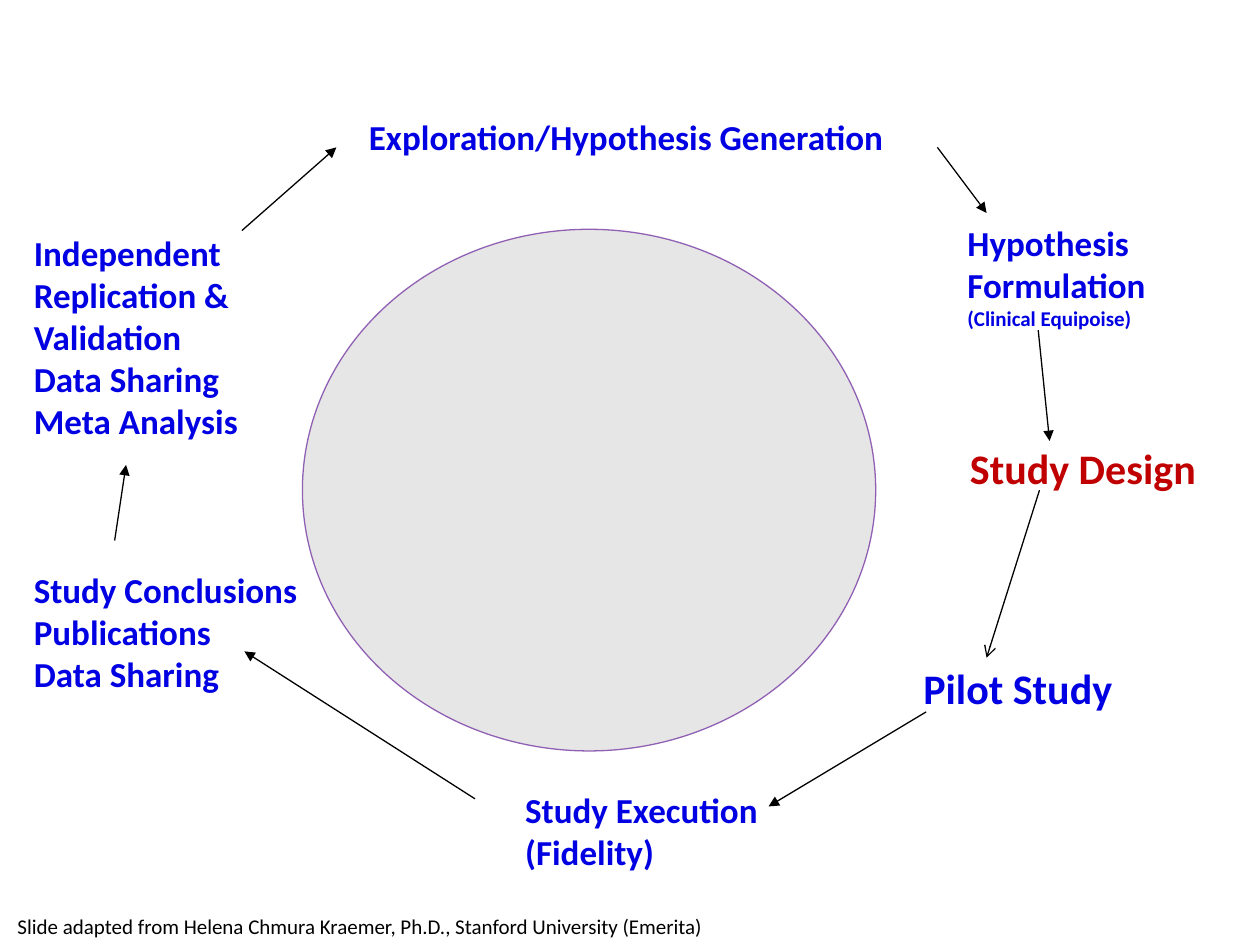
from lxml import etree
from pptx import Presentation
from pptx import util as u
from pptx.dml.color import RGBColor
from pptx.enum import shapes, text
from pptx.oxml import ns

PX = 9144  # EMU per px, 100 px to the inch
BLUE, RED, BLACK = "0000E2", "C00000", "000000"

# Stages of the cycle: box, lines of (text, size), colour, wrap
STAGES = [
    ((283, 87, 440, 44), [("Exploration/Hypothesis Generation", 20)], BLUE, True),
    ((758, 171, 225, 98), [("Hypothesis", 20), ("Formulation", 20),
                           ("(Clinical Equipoise)", 12)], BLUE, True),
    ((760, 346, 223, 50), [("Study Design", 24)], RED, True),
    ((723, 521, 179, 50), [("Pilot Study", 24)], BLUE, False),
    ((407, 621, 207, 77), [("Study Execution", 20), ("(Fidelity)", 20)], BLUE, False),
    ((17, 446, 250, 111), [("Study Conclusions", 20), ("Publications", 20),
                           ("Data Sharing", 20)], BLUE, True),
    ((17, 179, 229, 178), [("Independent", 20), ("Replication &", 20),
                           ("Validation", 20), ("Data Sharing", 20),
                           ("Meta Analysis", 20)], BLUE, True),
]

# Arrows from stage to stage: start, end, head
ARROWS = [
    ((744, 117), (783, 169), "triangle"),
    ((824, 262), (833, 350), "triangle"),
    ((825, 389), (783, 522), "arrow"),
    ((735, 565), (610, 640), "triangle"),
    ((377, 634), (194, 517), "triangle"),
    ((91, 429), (100, 369), "triangle"),
    ((192, 183), (267, 117), "triangle"),
]


def emu(*vals):
    return [u.Emu(v * PX) for v in vals]


def tint(color, code):
    color.rgb = RGBColor.from_string(code)


def sub(node, tag, **attrs):
    return etree.SubElement(node, ns.qn(tag), attrs)


def label(slide, box, lines, code, wrap=True, bold=True):
    frame = slide.shapes.add_textbox(*emu(*box)).text_frame
    frame.word_wrap = wrap
    frame.auto_size = text.MSO_AUTO_SIZE.SHAPE_TO_FIT_TEXT
    for i, (words, size) in enumerate(lines):
        para = frame.add_paragraph() if i else frame.paragraphs[0]
        para.text = words
        font = para.font
        font.name, font.size, font.bold = "Calibri", u.Pt(size), bold
        tint(font.color, code)


def arrow(slide, start, end, head):
    link = slide.shapes.add_connector(
        shapes.MSO_CONNECTOR.STRAIGHT, *emu(*start, *end))
    link.line.width = u.Pt(0.75)
    tint(link.line.color, BLACK)
    props = link._element.spPr
    sub(props.find(ns.qn("a:ln")), "a:tailEnd", type=head)
    sub(props, "a:effectLst")


def hub(slide, box):
    oval = slide.shapes.add_shape(shapes.MSO_SHAPE.OVAL, *emu(*box))
    oval.shadow.inherit = False
    oval.fill.solid()
    tint(oval.fill.fore_color, "E7E6E6")
    oval.line.width = u.Pt(0.75)
    tint(oval.line.color, "7030A0")
    # Line at 75 % opacity
    color = oval._element.spPr.find(".//" + ns.qn("a:ln")).find(
        ".//" + ns.qn("a:srgbClr"))
    sub(color, "a:alpha", val="75000")


def cycle(slide):
    hub(slide, (240, 182, 455, 414))
    for stage in STAGES:
        label(slide, *stage)
    for link in ARROWS:
        arrow(slide, *link)


def credit(slide, box):
    words = ("Slide adapted from Helena Chmura Kraemer, Ph.D., "
             "Stanford University (Emerita)")
    label(slide, box, [(words, 12)], BLACK, bold=False)


def main():
    prs = Presentation()
    prs.slide_width, prs.slide_height = emu(1000, 750)
    slide = prs.slides.add_slide(prs.slide_layouts[6])
    cycle(slide)
    credit(slide, (4, 720, 750, 30))
    prs.save("out.pptx")


if __name__ == "__main__":
    main()
